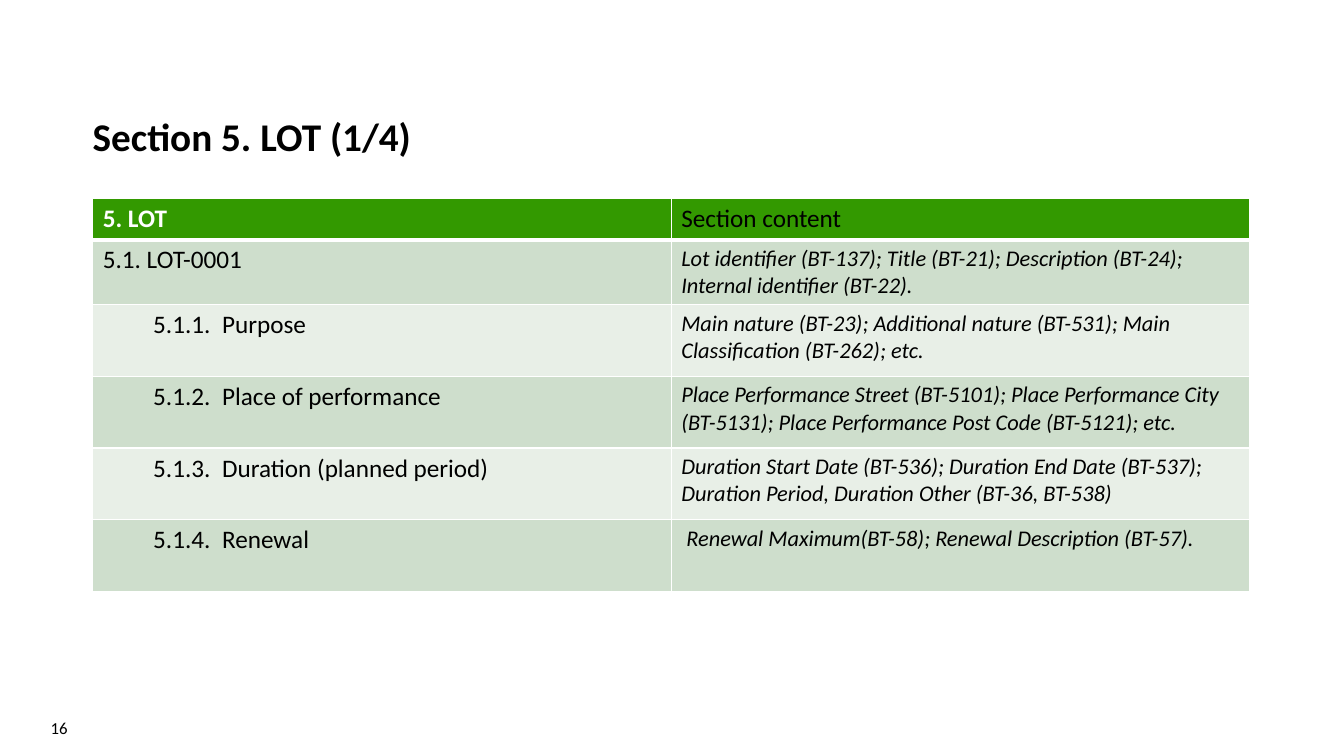
from lxml import etree
from pptx import Presentation
from pptx import util as u
from pptx.dml.color import RGBColor
from pptx.enum import text
from pptx.oxml.ns import qn

FONT = "Calibri"
BLACK, WHITE, GREEN = "000000", "FFFFFF", "339900"
BANDS = ("CEDECC", "E8EFE7")
LEFT, WIDTH = 66.24, 826.56
TABLE_TOP = 141.84
ROW_HEIGHTS = [29.5, 46.2] + [51.2] * 4
LOT_PARTS = [
    ("5.1. LOT-0001",
     "Lot identifier (BT-137); Title (BT-21); Description (BT-24); Internal identifier (BT-22)."),
    ("5.1.1.\tPurpose",
     "Main nature (BT-23); Additional nature (BT-531); Main Classification (BT-262); etc."),
    ("5.1.2.\tPlace of performance",
     "Place Performance Street (BT-5101); Place Performance City (BT-5131); "
     "Place Performance Post Code (BT-5121); etc."),
    ("5.1.3.\tDuration (planned period)",
     "Duration Start Date (BT-536); Duration End Date (BT-537); "
     "Duration Period, Duration Other (BT-36, BT-538)"),
    ("5.1.4.\tRenewal",
     "Renewal Maximum(BT-58); Renewal Description (BT-57)."),
]


def colour(code):
    """Turn a hex string into a colour."""
    return RGBColor.from_string(code)


def add_span(para, words, size, code=BLACK, bold=False, italic=False):
    """Add one formatted run to a paragraph."""
    span = para.add_run()
    span.text = words
    font = span.font
    font.name, font.size = FONT, u.Pt(size)
    font.bold, font.italic = bold, italic
    font.color.rgb = colour(code)


def place(box, left, top, width, height):
    """Set the position and size of a box in points."""
    box.left, box.top = u.Pt(left), u.Pt(top)
    box.width, box.height = u.Pt(width), u.Pt(height)


def add_title(page, words):
    """Fill and format the title placeholder."""
    box = page.shapes.title
    place(box, LEFT, 10.08, WIDTH, 104.4)
    frame = box.text_frame
    frame.auto_size = text.MSO_AUTO_SIZE.NONE
    frame.vertical_anchor = text.MSO_ANCHOR.BOTTOM
    frame.margin_left = frame.margin_right = frame.margin_bottom = 0
    para = frame.paragraphs[0]
    para.alignment = text.PP_ALIGN.LEFT
    para.line_spacing = 0.9
    add_span(para, words, 28, bold=True)


def add_page_number(page, number):
    """Add the page number in the lower left corner."""
    box = page.shapes.add_textbox(0, u.Pt(505.44), u.Pt(55.44), u.Pt(28.8))
    frame = box.text_frame
    frame.word_wrap = True
    frame.vertical_anchor = text.MSO_ANCHOR.MIDDLE
    para = frame.paragraphs[0]
    para.alignment = text.PP_ALIGN.RIGHT
    add_span(para, number, 12)


def paint_cell(cell, fill, bottom=1):
    """Give a cell white borders and a solid fill."""
    props = cell._tc.get_or_add_tcPr()
    for side, width in (("L", 1), ("R", 1), ("T", 1), ("B", bottom)):
        line = etree.SubElement(props, qn(f"a:ln{side}"), w=str(u.Pt(width)))
        solid = etree.SubElement(line, qn("a:solidFill"))
        etree.SubElement(solid, qn("a:srgbClr"), val=WHITE)
    cell.fill.solid()
    cell.fill.fore_color.rgb = colour(fill)


def indent_part(para):
    """Indent a numbered part and align its name after the number."""
    para.level = 1
    props = para._p.get_or_add_pPr()
    props.set("marL", str(u.Pt(85.2)))
    props.set("indent", str(u.Pt(-49.2)))


def add_lot_table(page):
    """Add the table of lot sections and their content."""
    frame = page.shapes.add_table(
        len(ROW_HEIGHTS), 2, u.Pt(LEFT), u.Pt(TABLE_TOP), u.Pt(WIDTH), u.Pt(sum(ROW_HEIGHTS)))
    table = frame.table
    for row, height in zip(table.rows, ROW_HEIGHTS):
        row.height = u.Pt(height)
    for column, (words, code) in enumerate((("5. LOT", WHITE), ("Section content", BLACK))):
        cell = table.cell(0, column)
        paint_cell(cell, GREEN, bottom=3)
        add_span(cell.text_frame.paragraphs[0], words, 18, code, bold=column == 0)
    for index, (part, content) in enumerate(LOT_PARTS):
        part_cell, content_cell = table.rows[index + 1].cells
        for cell in (part_cell, content_cell):
            paint_cell(cell, BANDS[index % 2])
        para = part_cell.text_frame.paragraphs[0]
        if index:
            indent_part(para)
        add_span(para, part, 18)
        add_span(content_cell.text_frame.paragraphs[0], content, 16, italic=True)
    content_cell.margin_left = u.Pt(10.8)


def main():
    """Build and save the slide."""
    deck = Presentation()
    deck.slide_width, deck.slide_height = u.Pt(960), u.Pt(540)
    page = deck.slides.add_slide(deck.slide_layouts[5])
    add_title(page, "Section 5. LOT (1/4)")
    add_lot_table(page)
    add_page_number(page, "16")
    deck.save("out.pptx")


if __name__ == "__main__":
    main()
